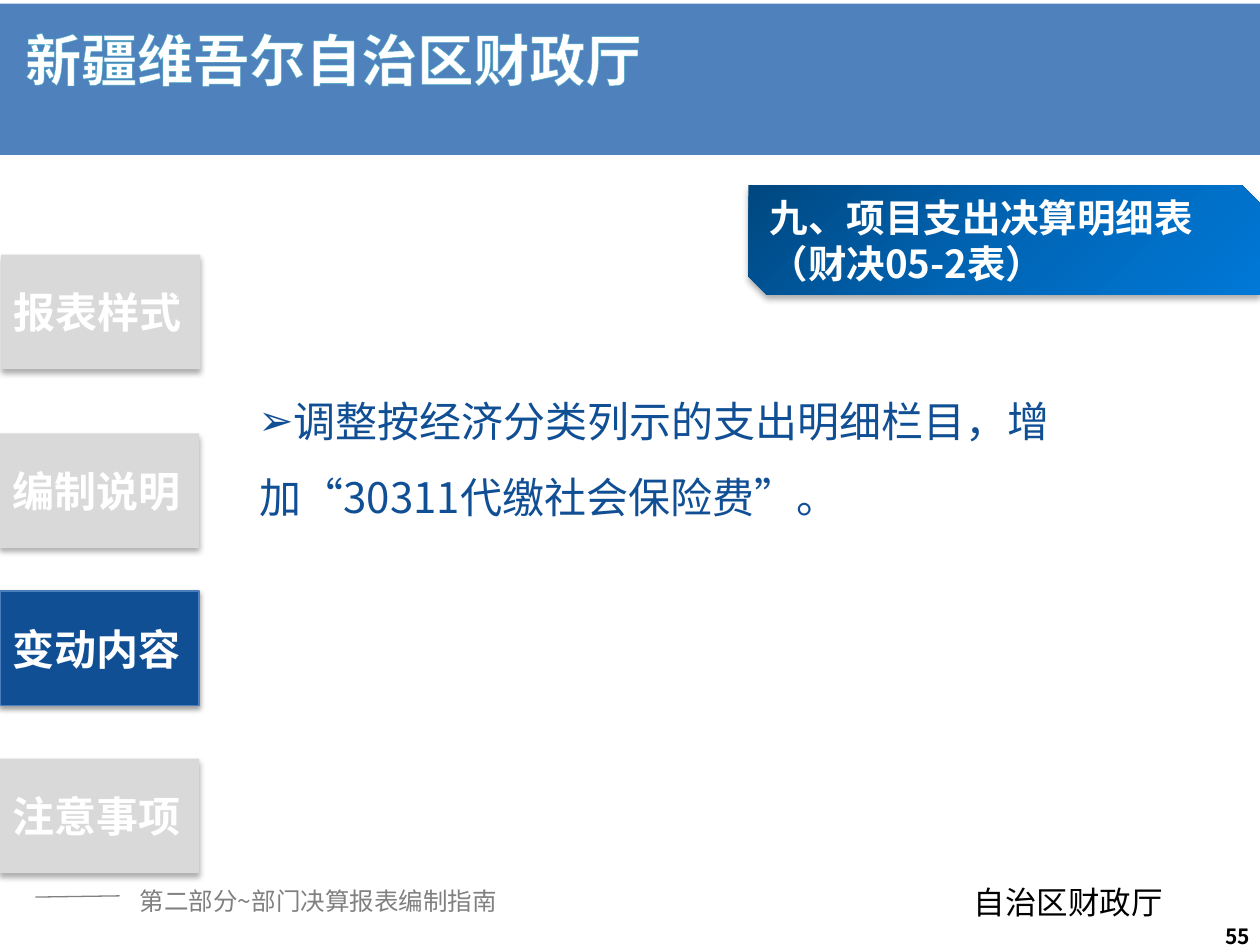
"""Build the slide on the change notes for the project spending table."""
import lxml.etree
import pptx
import pptx.dml.color
import pptx.enum.shapes
import pptx.enum.text
import pptx.oxml
import pptx.util

Inches = pptx.util.Inches
Pt = pptx.util.Pt
Shape = pptx.enum.shapes.MSO_SHAPE
Anchor = pptx.enum.text.MSO_ANCHOR
Align = pptx.enum.text.PP_ALIGN
FONT = "Noto Sans CJK SC"
NS = 'xmlns:a="http://schemas.openxmlformats.org/drawingml/2006/main"'
SHADE = (
    f'<a:effectLst {NS}><a:outerShdw blurRad="%d" dist="%d" dir="5400000" '
    'rotWithShape="0"><a:srgbClr val="000000"><a:alpha val="%d"/>'
    "</a:srgbClr></a:outerShdw></a:effectLst>"
)


def color(code):
    """Turn a hex string into a colour."""
    return pptx.dml.color.RGBColor.from_string(code)


def write(shape, text, size, ink, bold=False, align=Align.LEFT,
          anchor=Anchor.TOP, wrap=True, before=0, lines=1.0):
    """Fill a shape with formatted text, one paragraph a line."""
    frame = shape.text_frame
    frame.text = text
    frame.auto_size = pptx.enum.text.MSO_AUTO_SIZE.NONE
    frame.word_wrap = wrap
    frame.vertical_anchor = anchor
    for para in frame.paragraphs:
        para.alignment = align
        para.space_before = Pt(before)
        para.line_spacing = lines
        font = para.runs[0].font
        font.size, font.bold, font.name = Pt(size), bold, FONT
        font.color.rgb = color(ink)
        east = lxml.etree.SubElement(font._element, pptx.oxml.ns.qn("a:ea"))
        east.set("typeface", FONT)


deck = pptx.Presentation()
deck.slide_width, deck.slide_height = Inches(10), Inches(7.5)
slide = deck.slides.add_slide(deck.slide_layouts[1])
shapes = slide.shapes
title, body = shapes.title, slide.placeholders[1]

# Header
for top, high in ((0.23, 1), (0.03, 0.87)):
    band = shapes.add_shape(
        Shape.RECTANGLE, 0, Inches(top), Inches(10), Inches(high))
    band.fill.solid()
    band.fill.fore_color.rgb = color("4F81BD")
    band.line.fill.background()
    band.shadow.inherit = False

title.left, title.top = Inches(0.1), Inches(0.15)
title.width, title.height = Inches(5.66), Inches(0.64)
write(title, "新疆维吾尔自治区财政厅", 32, "FFFFFF", bold=True)
edge = pptx.oxml.parse_xml(
    f'<a:ln {NS} w="10160"><a:solidFill><a:srgbClr val="4BACC6"/>'
    "</a:solidFill></a:ln>")
title.text_frame.paragraphs[0].runs[0].font._element.insert(0, edge)
shapes._spTree.append(title._element)

tag = shapes.add_shape(
    Shape.SNIP_2_DIAG_RECTANGLE,
    Inches(5.94), Inches(1.47), Inches(4.06), Inches(0.87))
tag.line.fill.background()
stops = "".join(
    f'<a:gs pos="{place}"><a:srgbClr val="{code}"/></a:gs>'
    for place, code in ((0, "00477F"), (50000, "0065B5"), (100000, "0078D7")))
blend = pptx.oxml.parse_xml(
    f'<a:gradFill {NS} rotWithShape="1"><a:gsLst>{stops}</a:gsLst>'
    '<a:lin ang="2700000" scaled="0"/></a:gradFill>')
tag._element.spPr.insert(2, blend)
tag._element.spPr.append(
    pptx.oxml.parse_xml(SHADE % (Pt(3.5), Pt(2.2), 32000)))
write(tag, "九、项目支出决算明细表\n（财决05-2表）", 22, "FFFFFF",
      bold=True, anchor=Anchor.MIDDLE)

# Body
body.left, body.top = Inches(1.95), Inches(2.89)
body.width, body.height = Inches(6.82), Inches(3.28)
write(body, "调整按经济分类列示的支出明细栏目，增加“30311代缴社会保险费”。",
      24, "114F95", before=4.8, lines=1.5)
body.text_frame.margin_right = Inches(0.2)
props = body.text_frame.paragraphs[0]._p.get_or_add_pPr()
props.set("marL", str(Inches(0.01)))
props.set("indent", str(Inches(-0.01)))
mark = lxml.etree.SubElement(props, pptx.oxml.ns.qn("a:buChar"))
mark.set("char", "➢")

# Side tabs
for text, left, top, live in (
    ("报表样式", 0.01, 2.02, False),
    ("编制说明", 0, 3.44, False),
    ("变动内容", 0, 4.69, True),
    ("注意事项", 0, 6.02, False),
):
    tab = shapes.add_shape(
        Shape.RECTANGLE, Inches(left), Inches(top), Inches(1.58), Inches(0.91))
    tab.fill.solid()
    tab.fill.fore_color.rgb = color("114F95" if live else "D9D9D9")
    if live:
        tab.line.color.rgb = color("4B7EBC")
        tab.line.width = Pt(0.75)
        shade = (Pt(3.1), Pt(1.6), 38000)
    else:
        tab.line.fill.background()
        shade = (Pt(3.5), Pt(2.2), 32000)
    tab._element.spPr.append(pptx.oxml.parse_xml(SHADE % shade))
    write(tab, text, 24, "FFFFFF", bold=True, anchor=Anchor.MIDDLE)

# Footer
rule = shapes.add_connector(
    pptx.enum.shapes.MSO_CONNECTOR.STRAIGHT,
    Inches(0.28), Inches(7.12), Inches(0.95), Inches(7.11))
rule.line.color.rgb = color("808080")
rule.line.width = Pt(0.75)
lxml.etree.SubElement(rule._element.spPr, pptx.oxml.ns.qn("a:effectLst"))

for text, left, top, wide, high, look in (
    ("第二部分~部门决算报表编制指南", 1.01, 6.98, 3.08, 0.34,
     dict(size=14, ink="808080", before=2.8)),
    ("自治区财政厅", 7.63, 6.96, 1.7, 0.4,
     dict(size=18, ink="000000", wrap=False)),
    ("55", 7.69, 7.23, 2.33, 0.4,
     dict(size=12, ink="000000", bold=True, align=Align.RIGHT,
          anchor=Anchor.MIDDLE)),
):
    note = shapes.add_textbox(
        Inches(left), Inches(top), Inches(wide), Inches(high))
    write(note, text, **look)

deck.save("out.pptx")
